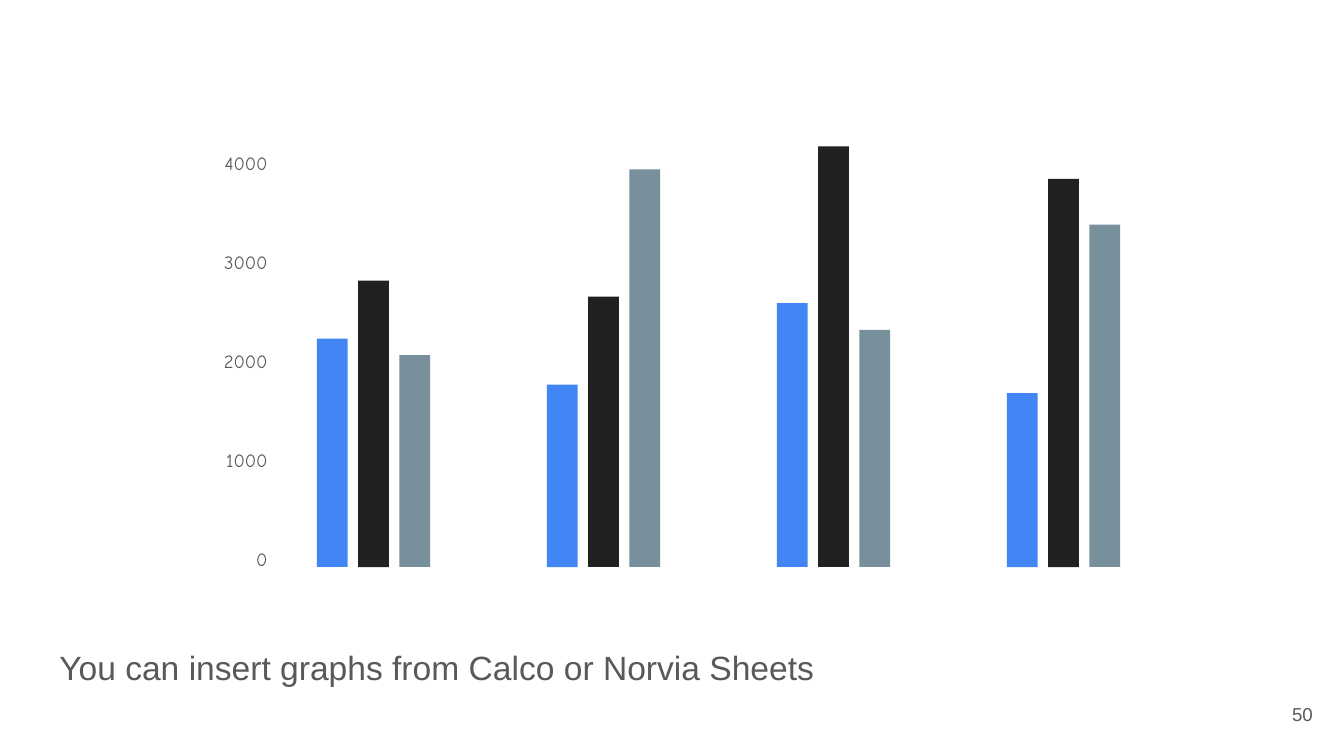
from dataclasses import dataclass

from pptx import Presentation, util as u
from pptx.dml import color as c
from pptx.enum import shapes, text

Pt = u.Pt


@dataclass(frozen=True)
class Theme:
    paper: str = "FFFFFF"
    ink: str = "595959"
    bars: tuple = ("4285F4", "212121", "78909C")
    body: str = "Arial"
    hand: str = "Comic Neue"
    large: int = 18
    small: int = 10


class Deck:
    def __init__(self, theme, wide, high):
        self.theme = theme
        self.show = Presentation()
        self.show.slide_width, self.show.slide_height = Pt(wide), Pt(high)
        self.slide = self.show.slides.add_slide(self.show.slide_layouts[6])
        self.paint(self.slide.background.fill, theme.paper)

    def paint(self, fill, tint):
        fill.solid()
        fill.fore_color.rgb = c.RGBColor.from_string(tint)

    def label(self, box, lines, font, size, align="LEFT", anchor="MIDDLE", pad=7.2, gap=0):
        frame = self.slide.shapes.add_textbox(*map(Pt, box)).text_frame
        frame.word_wrap = True
        frame.vertical_anchor = text.MSO_ANCHOR[anchor]
        frame.margin_left = frame.margin_right = Pt(pad)
        frame.margin_top = frame.margin_bottom = Pt(pad)
        for i, line in enumerate(lines):
            para = frame.paragraphs[0] if i == 0 else frame.add_paragraph()
            para.alignment = text.PP_ALIGN[align]
            para.space_before = Pt(gap if i else 0)
            run = para.add_run()
            run.text = line
            run.font.name, run.font.size = font, Pt(size)
            run.font.color.rgb = c.RGBColor.from_string(self.theme.ink)

    def bar(self, left, base, width, height, tint):
        shape = self.slide.shapes.add_shape(
            shapes.MSO_SHAPE.RECTANGLE, Pt(left), Pt(base - height), Pt(width), Pt(height)
        )
        shape.shadow.inherit = False
        shape.line.fill.background()
        self.paint(shape.fill, tint)

    def bars(self, groups, left, base, width, step, pitch):
        for g, group in enumerate(groups):
            for i, (height, tint) in enumerate(zip(group, self.theme.bars)):
                self.bar(left + g * pitch + i * step, base, width, height, tint)


def main():
    theme = Theme()
    deck = Deck(theme, 720, 405)
    deck.label((24.7, 333.4, 472.3, 47.5),
               ["You can insert graphs from Calco or Norvia Sheets"],
               theme.body, theme.large)
    deck.label((667.2, 367.2, 43.2, 31), ["50"], theme.body, theme.small, align="RIGHT")
    ticks = [str(n) for n in range(4000, -1, -1000)]
    deck.label((115.2, 81.4, 28.1, 238.3), ticks, theme.hand, theme.small,
               align="RIGHT", anchor="TOP", pad=0, gap=41)
    heights = [
        (122.4, 153.4, 113.5),
        (97.7, 144.8, 213),
        (141.4, 225.3, 127),
        (93.2, 208, 183.4),
    ]
    deck.bars(heights, left=169.8, base=303.8, width=16.5, step=22.1, pitch=123.2)
    deck.show.save("out.pptx")


if __name__ == "__main__":
    main()
